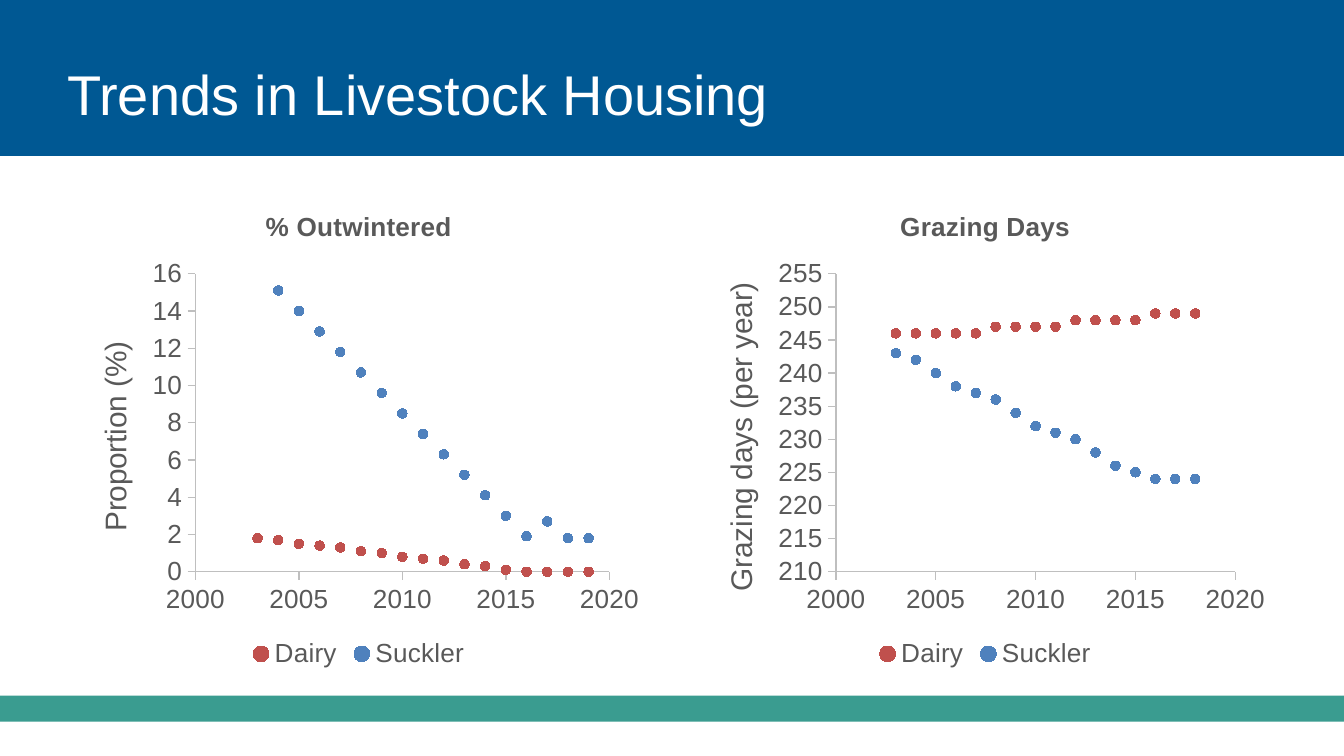
from lxml import etree
from pptx import Presentation
from pptx.chart.data import XyChartData
from pptx.dml.color import RGBColor
from pptx.enum.chart import XL_CHART_TYPE, XL_LEGEND_POSITION, XL_MARKER_STYLE, XL_TICK_MARK
from pptx.enum.shapes import MSO_SHAPE
from pptx.enum.text import MSO_ANCHOR, PP_ALIGN
from pptx.oxml.ns import qn
from pptx.util import Cm, Pt

BLUE = RGBColor(0x00, 0x58, 0x93)
TEAL = RGBColor(0x3A, 0x9C, 0x90)
WHITE = RGBColor(0xFF, 0xFF, 0xFF)
GREY = RGBColor(0x59, 0x59, 0x59)
AXIS_GREY = RGBColor(0xBF, 0xBF, 0xBF)
SERIES_COLORS = {"Dairy": RGBColor(0xC0, 0x50, 0x4D),
                 "Suckler": RGBColor(0x4F, 0x81, 0xBD)}
FIRST_YEAR = 2003

CHARTS = [
    {"title": "% Outwintered", "axis": "Proportion (%)",
     "scale": (0, 16, 2), "plot": (0.22, 0.177, 0.71, 0.613),
     "values": {
         "Dairy": [1.8, 1.7, 1.5, 1.4, 1.3, 1.1, 1, 0.8, 0.7, 0.6, 0.4, 0.3, 0.1, 0, 0, 0, 0],
         "Suckler": [16.2, 15.1, 14, 12.9, 11.8, 10.7, 9.6, 8.5, 7.4, 6.3, 5.2, 4.1, 3, 1.9,
                     2.7, 1.8, 1.8]}},
    {"title": "Grazing Days", "axis": "Grazing days (per year)",
     "scale": (210, 255, 5), "plot": (0.244, 0.177, 0.685, 0.613),
     "values": {
         "Dairy": [246] * 5 + [247] * 4 + [248] * 4 + [249] * 3,
         "Suckler": [243, 242, 240, 238, 237, 236, 234, 232, 231, 230, 228, 226, 225,
                     224, 224, 224]}},
]


def set_font(font, size, color=GREY, bold=False):
    values = {"name": "Arial", "size": Pt(size), "bold": bold}
    for name, value in values.items():
        setattr(font, name, value)
    font.color.rgb = color


def add_band(s, box, color):
    sp = s.shapes.add_shape(MSO_SHAPE.RECTANGLE, *box)
    sp.shadow.inherit = False
    sp.fill.solid()
    sp.fill.fore_color.rgb = color
    sp.line.fill.background()


def place_title(s, box, text):
    title = s.shapes.title
    for name, value in zip(("left", "top", "width", "height"), box):
        setattr(title, name, value)
    tf = title.text_frame
    frame = {"margin_left": 0, "margin_right": 0, "margin_top": 0, "margin_bottom": 0,
             "vertical_anchor": MSO_ANCHOR.MIDDLE, "word_wrap": True}
    for name, value in frame.items():
        setattr(tf, name, value)
    p = tf.paragraphs[0]
    p.alignment = PP_ALIGN.LEFT
    r = p.add_run()
    r.text = text
    set_font(r.font, 30, WHITE)
    # Bring the title in front of the header band
    s.shapes._spTree.append(title._element)


def write_label(tf, text, size, bold=False):
    p = tf.paragraphs[0]
    r = p.add_run()
    r.text = text
    set_font(r.font, size, bold=bold)


def format_axis(axis, scale, number_format):
    low, high, step = scale
    values = {"minimum_scale": low, "maximum_scale": high, "major_unit": step,
              "has_major_gridlines": False, "major_tick_mark": XL_TICK_MARK.OUTSIDE,
              "minor_tick_mark": XL_TICK_MARK.NONE}
    for name, value in values.items():
        setattr(axis, name, value)
    axis.format.line.color.rgb = AXIS_GREY
    axis.format.line.width = Pt(0.75)
    axis.tick_labels.number_format = number_format
    axis.tick_labels.number_format_is_linked = False
    set_font(axis.tick_labels.font, 14)


def place_plot(chart, fractions):
    area = chart._chartSpace.chart.plotArea
    layout = area.find(qn("c:layout"))
    if layout is None:
        layout = etree.Element(qn("c:layout"))
        area.insert(0, layout)
    manual = etree.SubElement(layout, qn("c:manualLayout"))
    settings = [("layoutTarget", "inner"), ("xMode", "edge"), ("yMode", "edge")]
    settings += zip("xywh", fractions)
    for tag, value in settings:
        etree.SubElement(manual, qn(f"c:{tag}")).set("val", str(value))


def add_scatter(s, box, content):
    data = XyChartData()
    for name, values in content["values"].items():
        series = data.add_series(name)
        for year, value in enumerate(values, FIRST_YEAR):
            series.add_data_point(year, value)
    chart = s.shapes.add_chart(XL_CHART_TYPE.XY_SCATTER, *box, data).chart
    set_font(chart.font, 10)

    # Titles and legend
    chart.has_title = True
    write_label(chart.chart_title.text_frame, content["title"], 14, True)
    chart.has_legend = True
    chart.legend.position = XL_LEGEND_POSITION.BOTTOM
    chart.legend.include_in_layout = False
    set_font(chart.legend.font, 14)

    # Axes
    format_axis(chart.category_axis, (2000, 2020, 5), "General")
    format_axis(chart.value_axis, content["scale"], "0")
    tf = chart.value_axis.axis_title.text_frame
    write_label(tf, content["axis"], 16)
    body = tf._txBody.find(qn("a:bodyPr"))
    body.set("rot", "-5400000")
    body.set("vert", "horz")
    place_plot(chart, content["plot"])

    # Markers without joining lines
    plot = chart.plots[0]
    plot.vary_by_categories = False
    for series in plot.series:
        color = SERIES_COLORS[series.name]
        series.format.line.fill.background()
        marker = series.marker
        marker.style = XL_MARKER_STYLE.CIRCLE
        marker.size = 5
        marker.format.fill.solid()
        marker.format.fill.fore_color.rgb = color
        marker.format.line.color.rgb = color


def main():
    prs = Presentation()
    prs.slide_width, prs.slide_height = Cm(25.4), Cm(14.29)
    s = prs.slides.add_slide(prs.slide_layouts[5])

    # Header and footer bands
    add_band(s, (0, Cm(-0.05), prs.slide_width, Cm(3)), BLUE)
    add_band(s, (0, Cm(13.15), prs.slide_width, Cm(0.49)), TEAL)
    place_title(s, (Cm(1.27), Cm(0.57), Cm(22.86), Cm(2.38)), "Trends in Livestock Housing")

    # Two equal charts side by side
    margin, width, gap = Cm(1.27), Cm(11.02), Cm(0.82)
    for i, content in enumerate(CHARTS):
        add_scatter(s, (margin + i * (width + gap), Cm(3.55), width, Cm(9.19)), content)

    prs.save("out.pptx")


if __name__ == "__main__":
    main()
